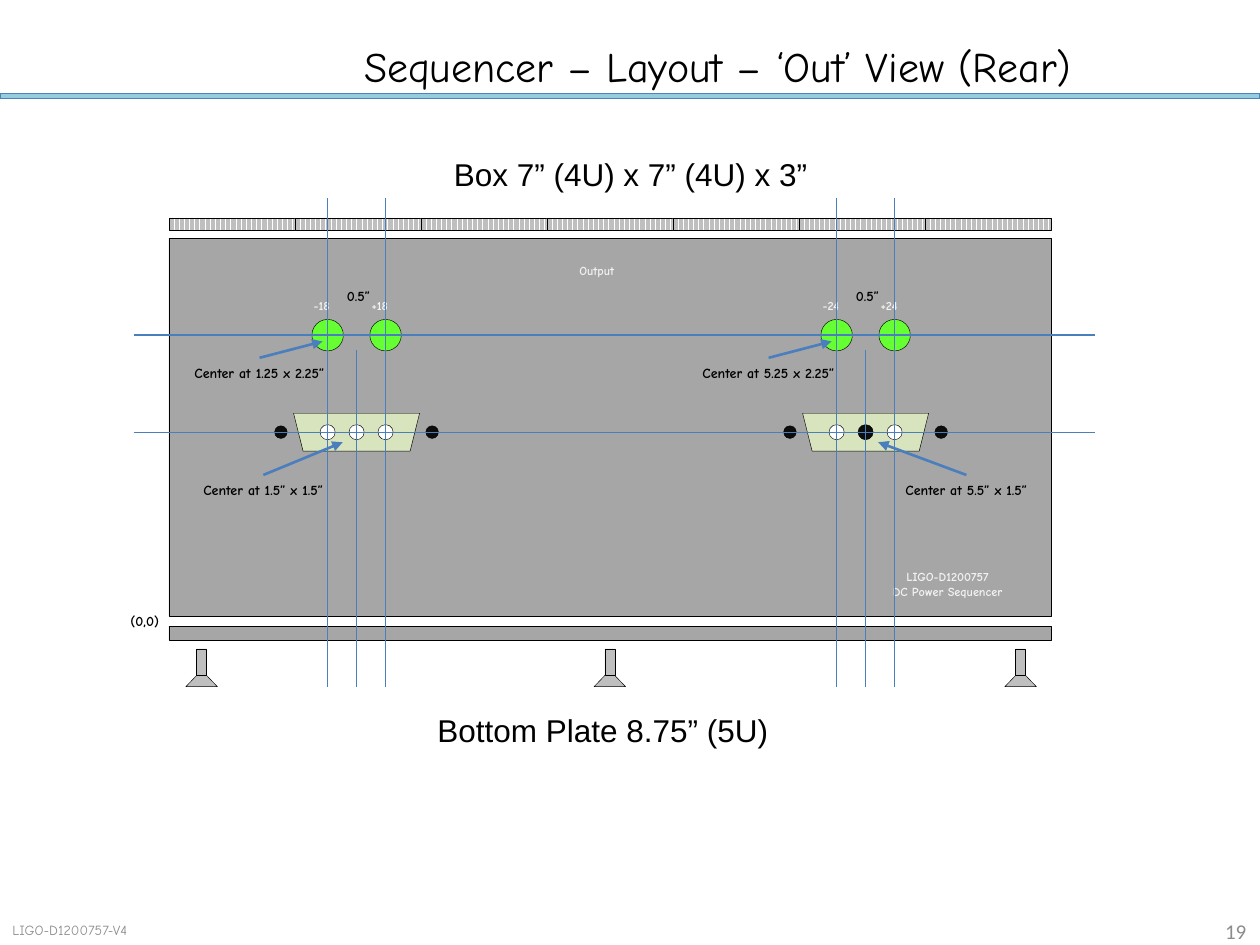
from collections import namedtuple

from lxml.etree import SubElement
from pptx import Presentation
from pptx.dml.color import RGBColor
from pptx.enum.dml import MSO_PATTERN
from pptx.enum.shapes import MSO_CONNECTOR, MSO_SHAPE
from pptx.enum.text import MSO_ANCHOR, PP_ALIGN
from pptx.oxml.ns import qn
from pptx.util import Inches, Pt

BLACK = RGBColor(0x00, 0x00, 0x00)
WHITE = RGBColor(0xFF, 0xFF, 0xFF)
INK = RGBColor(0x0D, 0x0D, 0x0D)
PALE = RGBColor(0xF2, 0xF2, 0xF2)
FOOTER_GREY = RGBColor(0x8C, 0x8C, 0x8C)
PANEL_GREY = RGBColor(0xA6, 0xA6, 0xA6)
METAL = RGBColor(0xBF, 0xBF, 0xBF)
SOCKET = RGBColor(0xD7, 0xE4, 0xBD)
LAMP = RGBColor(0x66, 0xFF, 0x33)
RULE_FILL = RGBColor(0x93, 0xCD, 0xDD)
RULE_EDGE = RGBColor(0x4F, 0x81, 0xBD)
GUIDE = RGBColor(0x4B, 0x7E, 0xBC)

HAND, SANS, NUMBER = "Comic Neue", "Arial", "Calibri"
SLIDE_W, SLIDE_H = 10, 7.5
PIN_GAP = 0.23          # from one pin of a port to the next

Box = namedtuple("Box", "left top width height")
Port = namedtuple("Port", "x lamps lamp_note note note_shift tip_shift pins")

PANEL = Box(1.34, 1.89, 7, 3)
LAMP_ROW = PANEL.top + 0.77
PIN_ROW = PANEL.top + 1.54
GUIDE_END = PANEL.top + 3.56

PORTS = [
    Port(PANEL.left + 1.49, ("-18", "+18"), "Center at 1.25 x 2.25”",
         "Center at 1.5” x 1.5”", -0.74, -0.11, (WHITE, WHITE, WHITE)),
    Port(PANEL.left + 5.53, ("-24", "+24"), "Center at 5.25 x 2.25”",
         "Center at 5.5” x 1.5”", 0.8, 0.1, (WHITE, INK, WHITE)),
]


def add_part(slide, kind, box, color, edge=BLACK, edge_width=0.25):
    part = slide.shapes.add_shape(kind, *map(Inches, box))
    part.shadow.inherit = False
    part.fill.solid()
    part.fill.fore_color.rgb = color
    part.line.color.rgb = edge
    part.line.width = Pt(edge_width)
    return part


def add_dot(slide, x, y, size, color):
    box = Box(x - size / 2, y - size / 2, size, size)
    add_part(slide, MSO_SHAPE.OVAL, box, color)


def add_line(slide, start, end, width=0.75, arrow=False):
    line = slide.shapes.add_connector(
        MSO_CONNECTOR.STRAIGHT, *map(Inches, (*start, *end)))
    line.line.color.rgb = GUIDE
    line.line.width = Pt(width)
    if arrow:
        SubElement(line.line._get_or_add_ln(), qn("a:tailEnd"), type="triangle")
    SubElement(line._element.spPr, qn("a:effectLst"))


def write(frame, lines, size, color, font, bold, align):
    frame.word_wrap = True
    for index, words in enumerate(lines):
        paragraph = frame.paragraphs[0] if index == 0 else frame.add_paragraph()
        paragraph.alignment = align
        run = paragraph.add_run()
        run.text = words
        run.font.size = Pt(size)
        run.font.name = font
        run.font.bold = bold
        run.font.color.rgb = color


def add_text(slide, box, *lines, size=8, color=BLACK, font=HAND, bold=True,
             align=PP_ALIGN.CENTER, anchor=MSO_ANCHOR.TOP):
    frame = slide.shapes.add_textbox(*map(Inches, box)).text_frame
    frame.vertical_anchor = anchor
    write(frame, lines, size, color, font, bold, align)


def add_note(slide, words, x, y, tip, above):
    """Centred note with an arrow from its top edge to tip."""
    add_text(slide, Box(x - 0.8, above, 1.6, 0.24), words)
    add_line(slide, (x, y), tip, 1.5, arrow=True)


def add_frame(slide, box):
    """Title, rule and footer."""
    add_part(slide, MSO_SHAPE.RECTANGLE, Box(box.left, 0.74, box.width, 0.04),
             RULE_FILL, RULE_EDGE, 0.75)
    title = slide.shapes.title
    title.left, title.top, title.width, title.height = map(
        Inches, (1.89, 0.3, 7.61, 0.44))
    title.text_frame.vertical_anchor = MSO_ANCHOR.MIDDLE
    write(title.text_frame, ["Sequencer – Layout – ‘Out’ View (Rear)"],
          24, BLACK, HAND, False, PP_ALIGN.CENTER)
    foot = box.top + box.height - 0.22
    add_text(slide, Box(box.left, foot, 1.39, 0.2), "LIGO-D1200757-V4",
             color=FOOTER_GREY, bold=False, align=PP_ALIGN.LEFT,
             anchor=MSO_ANCHOR.MIDDLE)
    add_text(slide, Box(box.left + box.width - 0.74, foot, 0.73, 0.22), "19",
             size=12, color=FOOTER_GREY, font=NUMBER, bold=False,
             align=PP_ALIGN.RIGHT, anchor=MSO_ANCHOR.MIDDLE)


def add_foot(slide, x, top):
    add_part(slide, MSO_SHAPE.ISOSCELES_TRIANGLE,
             Box(x - 0.125, top + 0.17, 0.25, 0.13), METAL)
    add_part(slide, MSO_SHAPE.RECTANGLE, Box(x - 0.04, top, 0.08, 0.21), METAL)


def add_chassis(slide, box):
    """Vents, front panel, bottom plate, feet and their captions."""
    bottom = box.top + box.height
    for caption, left, top in (("Bottom Plate 8.75” (5U)", 3.25, bottom + 0.7),
                               ("Box 7” (4U) x 7” (4U) x 3”", 3.47, box.top - 0.71)):
        add_text(slide, Box(left, top, 3.07, 0.4), caption,
                 size=18, font=SANS, bold=False)
    for column in range(box.width):
        vent = add_part(slide, MSO_SHAPE.RECTANGLE,
                        Box(box.left + column, box.top - 0.16, 1, 0.1), METAL)
        vent.fill.patterned()
        vent.fill.pattern = MSO_PATTERN.DARK_VERTICAL
        vent.fill.fore_color.rgb = METAL
        vent.fill.back_color.rgb = WHITE
    add_part(slide, MSO_SHAPE.RECTANGLE,
             Box(box.left, bottom + 0.08, box.width, 0.11), PANEL_GREY)
    for x in (0.26, 3.5, 6.76):
        add_foot(slide, box.left + x, bottom + 0.26)
    add_part(slide, MSO_SHAPE.RECTANGLE, box, PANEL_GREY)
    add_text(slide, Box(box.left - 0.94, bottom - 0.08, 1.5, 0.24), "(0,0)")
    add_text(slide, Box(box.left + 3.16, box.top + 0.15, 0.57, 0.22), "Output",
             size=7, color=PALE, align=PP_ALIGN.LEFT)
    add_text(slide, Box(box.left + 5.53, bottom - 0.42, 1.3, 0.34),
             "LIGO-D1200757", "DC Power Sequencer", size=7, color=PALE)


def add_port(slide, port):
    """Socket with pins and screws below a pair of lamps, with notes."""
    socket = add_part(slide, MSO_SHAPE.TRAPEZOID,
                      Box(port.x - 0.5, PIN_ROW - 0.15, 1, 0.3), SOCKET)
    socket.rotation = 180
    for step, color in zip((-1, 0, 1), port.pins):
        add_dot(slide, port.x + step * PIN_GAP, PIN_ROW, 0.12, color)
    for side, voltage in zip((-1, 1), port.lamps):
        x = port.x + side * PIN_GAP
        add_dot(slide, x, LAMP_ROW, 0.25, LAMP)
        add_dot(slide, port.x + side * 0.6, PIN_ROW, 0.1, INK)
        add_text(slide, Box(x - 0.21, LAMP_ROW - 0.34, 0.41, 0.22), voltage,
                 size=7, color=PALE, align=PP_ALIGN.LEFT)
        add_line(slide, (x, GUIDE_END), (x, PANEL.top - 0.32))
    add_line(slide, (port.x, GUIDE_END), (port.x, LAMP_ROW + 0.12))
    add_text(slide, Box(port.x - 0.38, LAMP_ROW - 0.43, 0.79, 0.24), "0.5”")
    lamp_note = LAMP_ROW + 0.18
    add_note(slide, port.lamp_note, port.x - 0.77, lamp_note,
             (port.x - 0.27, LAMP_ROW + 0.05), lamp_note)
    pin_note = PIN_ROW + 0.34
    add_note(slide, port.note, port.x + port.note_shift, pin_note,
             (port.x + port.tip_shift, PIN_ROW + 0.08), pin_note)


def main():
    deck = Presentation()
    deck.slide_width, deck.slide_height = Inches(SLIDE_W), Inches(SLIDE_H)
    slide = deck.slides.add_slide(deck.slide_layouts[5])
    add_frame(slide, Box(0, 0, SLIDE_W, SLIDE_H))
    add_chassis(slide, PANEL)
    for port in PORTS:
        add_port(slide, port)
    # Centre lines of the lamps and the pins
    for y in (LAMP_ROW, PIN_ROW):
        add_line(slide, (PANEL.left - 0.28, y), (PANEL.left + 7.35, y))
    deck.save("out.pptx")


if __name__ == "__main__":
    main()
